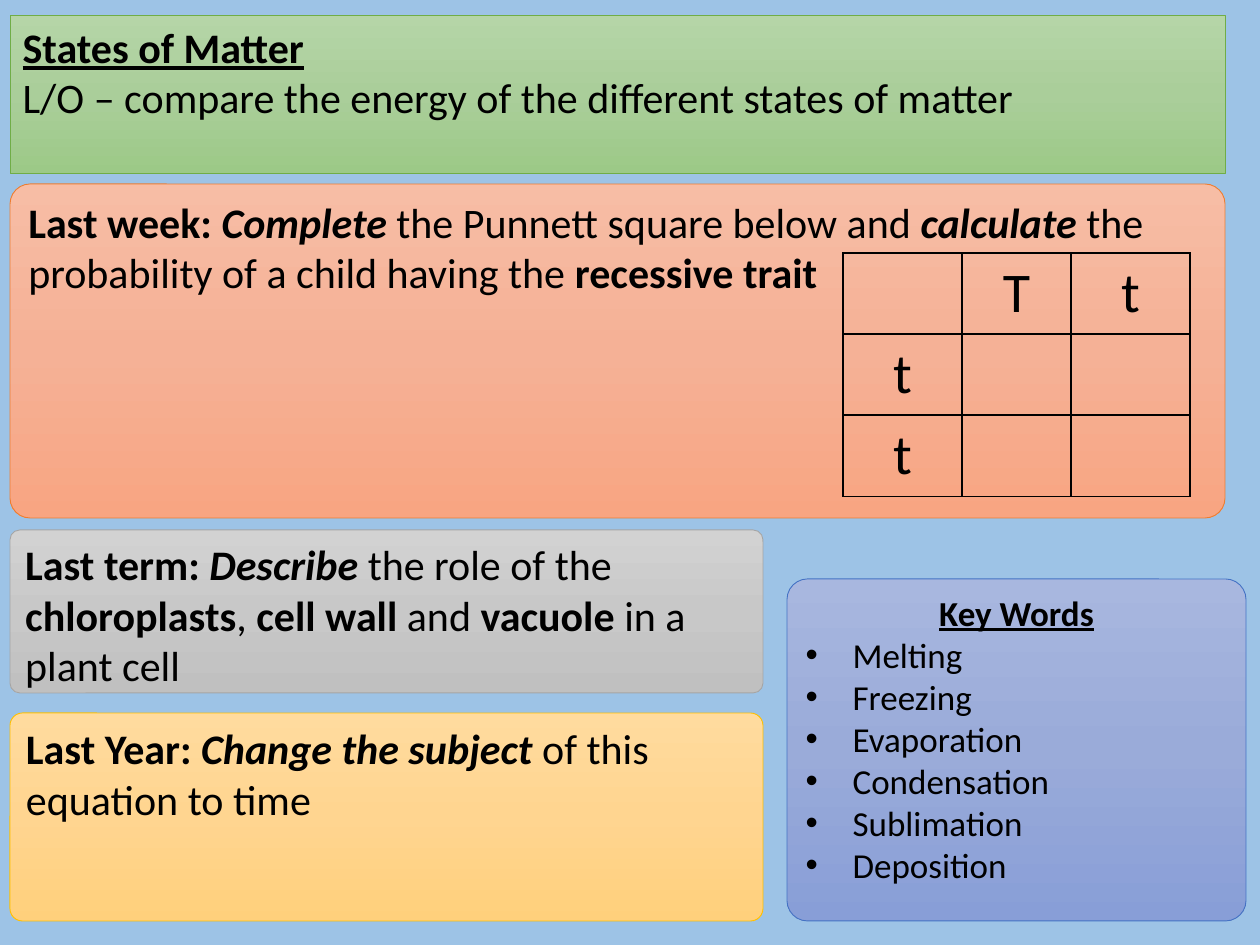
from copy import deepcopy
from dataclasses import dataclass

from pptx import Presentation
from pptx.dml.color import RGBColor
from pptx.enum.shapes import MSO_SHAPE
from pptx.enum.text import MSO_ANCHOR, MSO_AUTO_SIZE, PP_ALIGN
from pptx.oxml.xmlchemy import OxmlElement
from pptx.util import Emu, Pt


@dataclass(frozen=True)
class Theme:
    font: str = "Calibri"
    background: str = "9DC3E6"
    ink: str = "000000"
    body_size: int = 24
    key_size: int = 20
    table_size: int = 32
    line_width: float = 0.5
    border_width: int = 1
    corner: float = 0.06
    # outline, then gradient from top to bottom
    green: tuple = ("70AD47", "B5D5A7", "AACE9A", "9CC987")
    orange: tuple = ("ED7D31", "F7BDA5", "F5B196", "F8A582")
    grey: tuple = ("A5A5A5", "D2D2D2", "C8C8C8", "C0C0C0")
    gold: tuple = ("FFC000", "FFDB9E", "FFD590", "FFD07C")
    blue: tuple = ("4472C4", "A8B7DF", "9AABD9", "889ED7")


THEME = Theme()

# Runs are (text, style); style letters: b bold, i italic, u underline.
HEADING = [
    [("States of Matter", "bu")],
    [("L/O – compare the energy of the different states of matter", "")],
]
LAST_WEEK = [[
    ("Last week: ", "b"), ("Complete", "bi"),
    (" the Punnett square below and ", ""), ("calculate ", "bi"),
    ("the probability of a child having the ", ""), ("recessive trait", "b"),
]]
LAST_TERM = [[
    ("Last term: ", "b"), ("Describe", "bi"), (" the role of the ", ""),
    ("chloroplasts", "b"), (", ", ""), ("cell wall", "b"), (" and ", ""),
    ("vacuole", "b"), (" in a plant cell", ""),
]]
LAST_YEAR = [[
    ("Last Year: ", "b"), ("Change the subject", "bi"),
    (" of this equation to time", ""),
]]
KEY_TITLE = "Key Words"
KEY_WORDS = ["Melting", "Freezing", "Evaporation", "Condensation",
             "Sublimation", "Deposition"]
PUNNETT = [["", "T", "t"], ["t", "", ""], ["t", "", ""]]

# Lengths in px: left, top, width, height
HEADING_BOX = (10, 15, 1215, 159)
KEY_BOX = (787, 579, 459, 342)
QUESTIONS = [
    ((10, 184, 1215, 334), THEME.orange, LAST_WEEK),
    ((10, 530, 753, 163), THEME.grey, LAST_TERM),
    ((10, 713, 753, 208), THEME.gold, LAST_YEAR),
]
TABLE_ORIGIN = (843, 253)
COLUMN_WIDTHS = (119, 109, 119)
ROW_HEIGHT = 81
BULLET_INDENT = 47
SLIDE_SIZE = (1260, 945)


def px(length):
    return Emu(round(length * 914400 / 126))


def rgb(color):
    return RGBColor.from_string(color)


def add_run(paragraph, text, style, size):
    run = paragraph.add_run()
    run.text = text
    font = run.font
    font.name, font.size = THEME.font, Pt(size)
    font.color.rgb = rgb(THEME.ink)
    font.bold, font.italic, font.underline = (flag in style for flag in "biu")


def add_bullet(paragraph):
    properties = paragraph._p.get_or_add_pPr()
    properties.set("marL", str(px(BULLET_INDENT)))
    properties.set("indent", str(-px(BULLET_INDENT)))
    for tag, name, value in (("a:buFont", "typeface", "Arial"),
                             ("a:buChar", "char", "•")):
        element = OxmlElement(tag)
        element.set(name, value)
        properties.append(element)


def place_placeholder(placeholder, box):
    """Move a placeholder and give it the rounded outline of the panels."""
    placeholder.left, placeholder.top, placeholder.width, placeholder.height = map(px, box)
    geometry = OxmlElement("a:prstGeom")
    geometry.set("prst", "roundRect")
    geometry.append(OxmlElement("a:avLst"))
    placeholder._element.spPr.insert(1, geometry)
    return placeholder


def style_panel(shape, colors):
    outline, *gradient = colors
    shape.shadow.inherit = False
    shape.adjustments[0] = THEME.corner
    shape.fill.gradient()
    shape.fill.gradient_angle = 270
    first_stop = shape.fill.gradient_stops[0]._gs
    first_stop.addnext(deepcopy(first_stop))
    for index, (stop, color) in enumerate(zip(shape.fill.gradient_stops, gradient)):
        stop.color.rgb = rgb(color)
        stop.position = index / 2
    shape.line.color.rgb = rgb(outline)
    shape.line.width = Pt(THEME.line_width)


def write_panel(shape, paragraphs, size):
    frame = shape.text_frame
    frame.word_wrap = True
    frame.auto_size = MSO_AUTO_SIZE.NONE
    frame.vertical_anchor = MSO_ANCHOR.TOP
    for index, runs in enumerate(paragraphs):
        paragraph = frame.add_paragraph() if index else frame.paragraphs[0]
        paragraph.alignment = PP_ALIGN.LEFT
        paragraph.space_before = Pt(0)
        for text, style in runs:
            add_run(paragraph, text, style, size)


def write_key_words(shape):
    lines = [[(KEY_TITLE, "bu")]] + [[(word, "")] for word in KEY_WORDS]
    write_panel(shape, lines, THEME.key_size)
    title, *words = shape.text_frame.paragraphs
    title.alignment = PP_ALIGN.CENTER
    properties = title._p.get_or_add_pPr()
    properties.set("marL", "0")
    properties.set("indent", "0")
    properties.append(OxmlElement("a:buNone"))
    for paragraph in words:
        add_bullet(paragraph)


def add_borders(cell):
    properties = cell._tc.get_or_add_tcPr()
    for index, side in enumerate("LRTB"):
        line = OxmlElement(f"a:ln{side}")
        line.set("w", str(Pt(THEME.border_width)))
        fill, color = OxmlElement("a:solidFill"), OxmlElement("a:srgbClr")
        color.set("val", THEME.ink)
        fill.append(color)
        line.append(fill)
        properties.insert(index, line)


def add_punnett_square(slide):
    size = (sum(COLUMN_WIDTHS), ROW_HEIGHT * len(PUNNETT))
    table = slide.shapes.add_table(len(PUNNETT), len(COLUMN_WIDTHS),
                                   *map(px, TABLE_ORIGIN + size)).table
    table.first_row = table.horz_banding = False
    for column, width in zip(table.columns, COLUMN_WIDTHS):
        column.width = px(width)
    for row, values in zip(table.rows, PUNNETT):
        row.height = px(ROW_HEIGHT)
        for cell, value in zip(row.cells, values):
            cell.fill.background()
            add_borders(cell)
            if value:
                paragraph = cell.text_frame.paragraphs[0]
                paragraph.alignment = PP_ALIGN.CENTER
                add_run(paragraph, value, "", THEME.table_size)


def main():
    presentation = Presentation()
    presentation.slide_width, presentation.slide_height = map(px, SLIDE_SIZE)
    slide = presentation.slides.add_slide(presentation.slide_layouts[1])
    slide.background.fill.solid()
    slide.background.fill.fore_color.rgb = rgb(THEME.background)

    heading = place_placeholder(slide.shapes.title, HEADING_BOX)
    style_panel(heading, THEME.green)
    write_panel(heading, HEADING, THEME.body_size)

    key_words = place_placeholder(slide.placeholders[1], KEY_BOX)
    style_panel(key_words, THEME.blue)
    write_key_words(key_words)

    for box, colors, paragraphs in QUESTIONS:
        panel = slide.shapes.add_shape(MSO_SHAPE.ROUNDED_RECTANGLE, *map(px, box))
        style_panel(panel, colors)
        write_panel(panel, paragraphs, THEME.body_size)

    add_punnett_square(slide)
    presentation.save("out.pptx")


if __name__ == "__main__":
    main()
